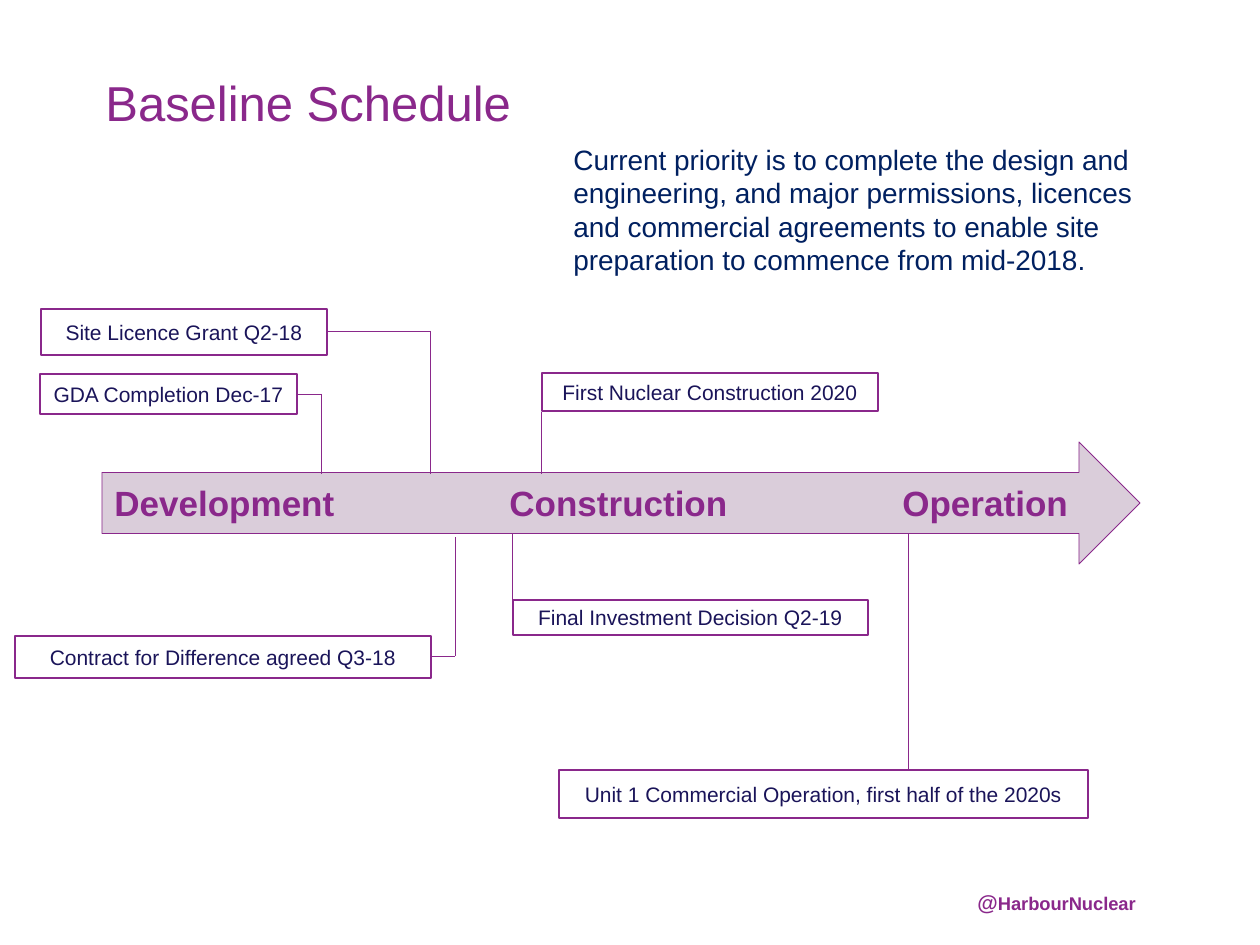
import pptx
import pptx.util
import pptx.dml.color
import pptx.enum.shapes
import pptx.enum.text
from dataclasses import dataclass
from lxml import etree
from pptx.oxml.ns import qn


@dataclass(frozen=True)
class Theme:
    font: str = "Arial"
    purple: str = "8A288B"
    navy: str = "002060"
    ink: str = "1A1459"
    lilac: str = "DACDDA"
    white: str = "FFFFFF"
    title: float = 28
    phase: float = 20
    body: float = 16
    label: float = 12
    handle: float = 10.5
    border: float = 1.5
    hairline: float = 0.5


T = Theme()
RGB = pptx.dml.color.RGBColor.from_string
SHAPE = pptx.enum.shapes.MSO_SHAPE
ALIGN = pptx.enum.text.PP_ALIGN
PX = 914400 / 126


def px(*values):
    """Turn pixel lengths into EMU."""
    return [round(v * PX) for v in values]


def add_run(p, text, size, color, bold=False):
    r = p.add_run()
    r.text = text
    r.font.name = T.font
    r.font.size = pptx.util.Pt(size)
    r.font.bold = bold
    r.font.color.rgb = RGB(color)


prs = pptx.Presentation()
prs.slide_width, prs.slide_height = px(1260, 945)
s = prs.slides.add_slide(prs.slide_layouts[6])

# Title, summary and social handle
priority = (
    "Current priority is to complete the design and engineering, and major "
    "permissions, licences and commercial agreements to enable site "
    "preparation to commence from mid-2018."
)
texts = [
    ((965, 883, 210, 38), True,
     [("@", T.label, T.purple, True), ("HarbourNuclear", T.handle, T.purple, True)]),
    ((561, 136, 624, 149), True, [(priority, T.body, T.navy)]),
    ((93, 66, 436, 72), False, [("Baseline Schedule", T.title, T.purple)]),
]
for box, wrap, runs in texts:
    tf = s.shapes.add_textbox(*px(*box)).text_frame
    tf.word_wrap = wrap
    for run in runs:
        add_run(tf.paragraphs[0], *run)

# Phase arrow, with the phases set at tab stops
arrow = s.shapes.add_shape(SHAPE.RIGHT_ARROW, *px(102, 442, 1038, 122))
arrow.shadow.inherit = False
arrow.fill.solid()
arrow.fill.fore_color.rgb = RGB(T.lilac)
arrow.line.color.rgb = RGB(T.purple)
arrow.line.width = pptx.util.Pt(T.hairline)
tf = arrow.text_frame
tf.word_wrap = True
tf.vertical_anchor = pptx.enum.text.MSO_ANCHOR.MIDDLE
p = tf.paragraphs[0]
p.alignment = ALIGN.LEFT
tabs = etree.SubElement(p._p.get_or_add_pPr(), qn("a:tabLst"))
for stop in px(395, 788):
    etree.SubElement(tabs, qn("a:tab"), pos=str(stop), algn="l")
add_run(p, "Development\tConstruction\tOperation", T.phase, T.purple, True)

# Milestones
milestones = [
    ("Site Licence Grant Q2-18", (41, 309, 286, 46)),
    ("GDA Completion Dec-17", (40, 374, 257, 40)),
    ("First Nuclear Construction 2020", (542, 373, 336, 38)),
    ("Final Investment Decision Q2-19", (513, 600, 355, 35)),
    ("Contract for Difference agreed Q3-18", (15, 636, 416, 42)),
    ("Unit 1 Commercial Operation, first half of the 2020s", (559, 770, 529, 48)),
]
for label, box in milestones:
    sp = s.shapes.add_shape(SHAPE.RECTANGLE, *px(*box))
    sp.shadow.inherit = False
    sp.fill.solid()
    sp.fill.fore_color.rgb = RGB(T.white)
    sp.line.color.rgb = RGB(T.purple)
    sp.line.width = pptx.util.Pt(T.border)
    tf = sp.text_frame
    tf.word_wrap = False
    tf.vertical_anchor = pptx.enum.text.MSO_ANCHOR.MIDDLE
    p = tf.paragraphs[0]
    p.alignment = ALIGN.CENTER
    add_run(p, label, T.label, T.ink)

# Leaders from the milestones to the arrow, each a list of corner points
leaders = [
    [(328, 331), (430, 331), (430, 474)],
    [(296, 394), (321, 394), (321, 474)],
    [(541, 412), (541, 474)],
    [(512, 534), (512, 635)],
    [(431, 656), (455, 656), (455, 537)],
    [(908, 534), (908, 770)],
]
for points in leaders:
    for start, end in zip(points, points[1:]):
        line = s.shapes.add_connector(
            pptx.enum.shapes.MSO_CONNECTOR.STRAIGHT, *px(*start, *end))
        line.line.color.rgb = RGB(T.purple)
        line.line.width = pptx.util.Pt(T.hairline)
        etree.SubElement(line._element.spPr, qn("a:effectLst"))

prs.save("out.pptx")
